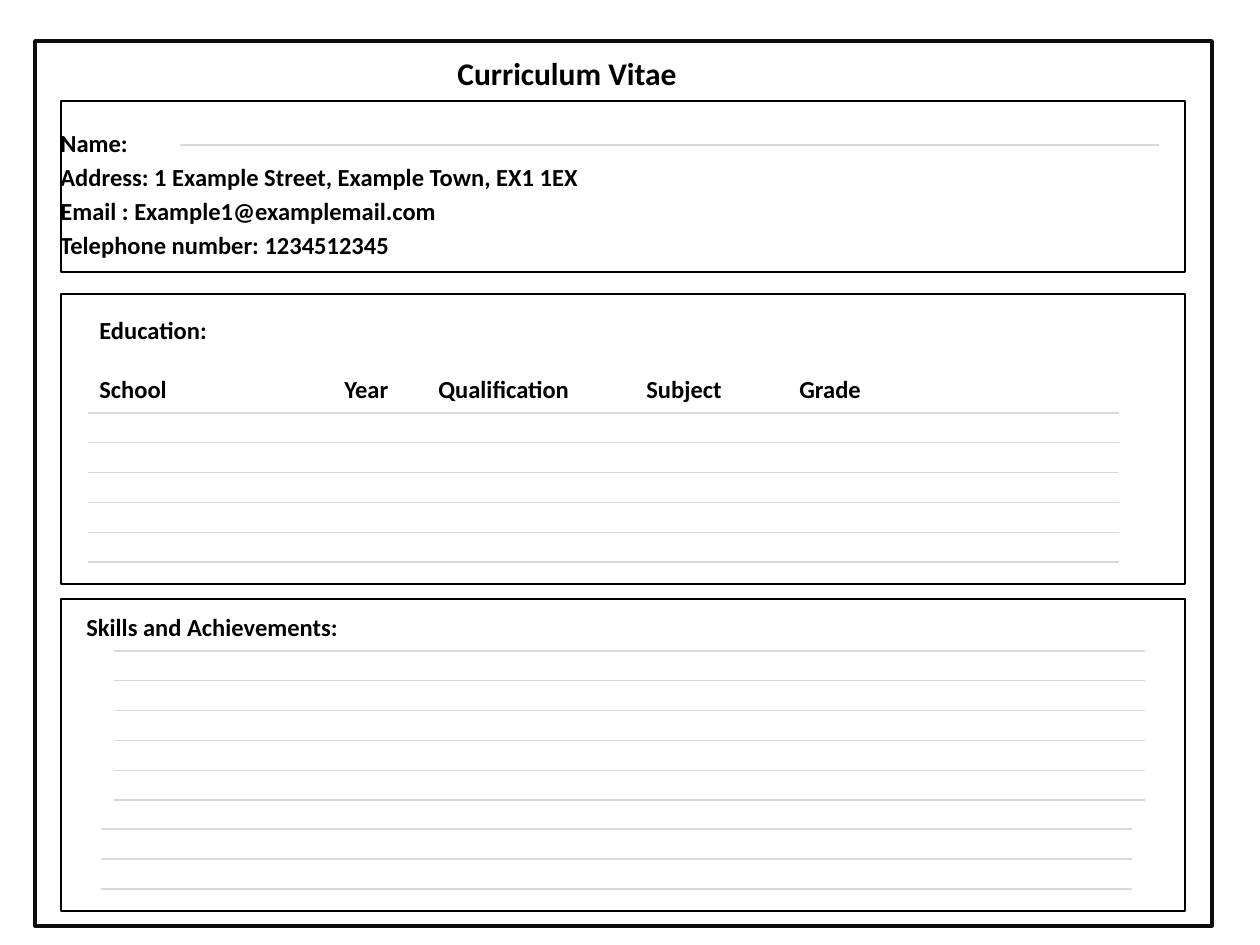
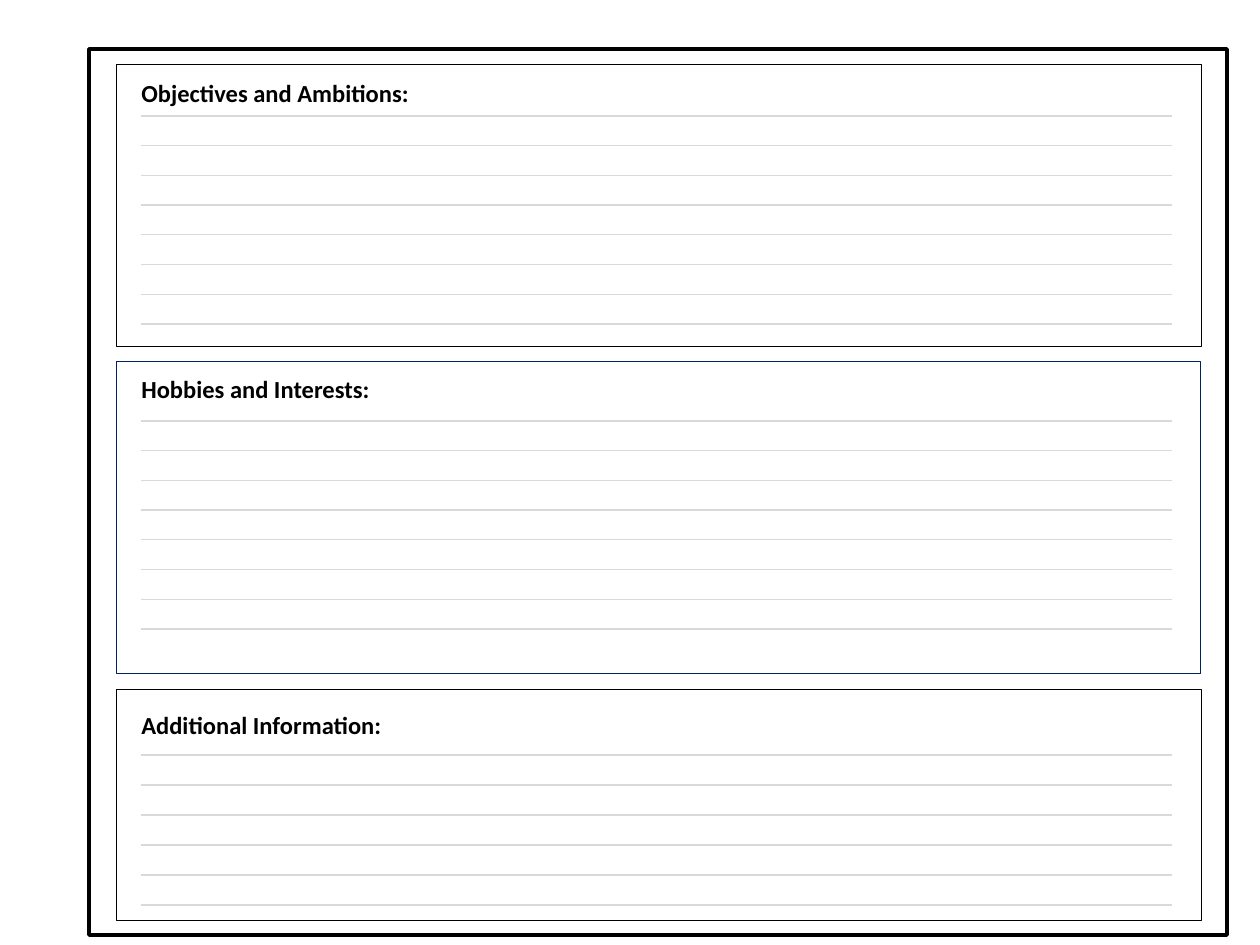
from collections import namedtuple

from lxml.etree import SubElement
from pptx import Presentation
from pptx.dml.color import RGBColor
from pptx.enum.shapes import MSO_CONNECTOR, MSO_SHAPE
from pptx.enum.text import MSO_ANCHOR
from pptx.oxml.ns import qn
from pptx.util import Emu, Pt

PIXELS_PER_INCH = 126
COLOURS = {"ink": "000000", "frame": "0D0D0D", "navy": "002060", "rule": "D9D9D9"}
FONT = "Calibri"
BODY_SIZE = 14
RULE_WIDTH = 1031

Box = namedtuple("Box", "left top width height")


def px(length):
    return Emu(round(length * 914400 / PIXELS_PER_INCH))


def colour(name):
    return RGBColor.from_string(COLOURS[name])


def inside(box, left, top, width, height):
    return Box(box.left + left, box.top + top, width, height)


def add_text(slide, box, text, size=BODY_SIZE, bold=True, space_before=0, tab_stops=()):
    shape = slide.shapes.add_textbox(*map(px, box))
    frame = shape.text_frame
    frame.word_wrap = True
    frame.vertical_anchor = MSO_ANCHOR.TOP
    for index, line in enumerate(text.split("\n")):
        paragraph = frame.paragraphs[0] if index == 0 else frame.add_paragraph()
        if index:
            paragraph.space_before = Pt(space_before)
        if tab_stops:
            tab_list = SubElement(paragraph._p.get_or_add_pPr(), qn("a:tabLst"))
            for stop in tab_stops:
                SubElement(tab_list, qn("a:tab"), pos=str(px(stop)), algn="l")
        run = paragraph.add_run()
        run.text = line
        run.font.name = FONT
        run.font.size = Pt(size)
        run.font.bold = bold
        run.font.color.rgb = colour("ink")


def add_outline(slide, box, kind, line="ink", weight=0.75):
    shape = slide.shapes.add_shape(kind, *map(px, box))
    shape.shadow.inherit = False
    shape.fill.background()
    shape.line.color.rgb = colour(line)
    shape.line.width = Pt(weight)


def add_rule(slide, left, top, width=RULE_WIDTH):
    rule = slide.shapes.add_connector(
        MSO_CONNECTOR.STRAIGHT, px(left), px(top), px(left + width), px(top))
    rule.line.color.rgb = colour("rule")
    rule.line.width = Pt(0.75)
    SubElement(rule._element.spPr, qn("a:effectLst"))


def add_rules(slide, box, left, first, last, count):
    for row in range(count):
        offset = first + (last - first) * row / (count - 1)
        add_rule(slide, box.left + left, box.top + offset)


def add_heading(slide, box, text, left=13, top=8):
    add_text(slide, inside(box, left, top, 503, 43), text)


def personal_details(slide, box):
    add_outline(slide, box, MSO_SHAPE.RECTANGLE)
    details = (
        "Name:\n"
        "Address: 1 Example Street, Example Town, EX1 1EX\n"
        "Email : Example1@examplemail.com\n"
        "Telephone number: 1234512345"
    )
    add_text(slide, inside(box, -13, 21, 1134, 82), details, space_before=2.5)
    add_rule(slide, box.left + 119, box.top + 44, 979)


def education(slide, box):
    add_outline(slide, box, MSO_SHAPE.RECTANGLE)
    columns = "\t".join(["School", "Year", "Qualification", "Subject", "Grade"])
    add_text(slide, inside(box, 26, 15, 1098, 190), "Education:\n" + columns,
             space_before=17, tab_stops=(245, 339, 547, 700))
    add_rules(slide, box, 27, 119, 268, 6)


def skills(slide, box):
    add_outline(slide, box, MSO_SHAPE.RECTANGLE)
    add_heading(slide, box, "Skills and Achievements:", top=7)
    add_rules(slide, box, 53, 52, 201, 6)
    add_rules(slide, box, 40, 230, 290, 3)


def ruled_section(slide, box, heading, heading_top, first, last, count, line="ink"):
    add_outline(slide, box, MSO_SHAPE.FLOWCHART_PROCESS, line, 0.25)
    add_heading(slide, box, heading, top=heading_top)
    add_rules(slide, box, 25, first, last, count)


def details_slide(slide):
    add_outline(slide, Box(35, 41, 1177, 885), MSO_SHAPE.RECTANGLE, "frame", 2)
    add_text(slide, Box(445, 48, 330, 50), "Curriculum Vitae", size=18)
    personal_details(slide, Box(61, 101, 1124, 171))
    education(slide, Box(61, 294, 1124, 290))
    skills(slide, Box(61, 599, 1124, 312))


def interests_slide(slide):
    add_outline(slide, Box(89, 49, 1138, 886), MSO_SHAPE.FLOWCHART_PROCESS, weight=2)
    ruled_section(slide, Box(116, 64, 1085, 282), "Objectives and Ambitions:", 8, 52, 260, 8)
    ruled_section(slide, Box(116, 361, 1084, 312), "Hobbies and Interests:", 7, 60, 268, 8, "navy")
    ruled_section(slide, Box(116, 689, 1085, 231), "Additional Information:", 15, 66, 216, 6)


def main():
    presentation = Presentation()
    presentation.slide_width = px(1260)
    presentation.slide_height = px(945)
    for build in (details_slide, interests_slide):
        build(presentation.slides.add_slide(presentation.slide_layouts[6]))
    presentation.save("out.pptx")


if __name__ == "__main__":
    main()
